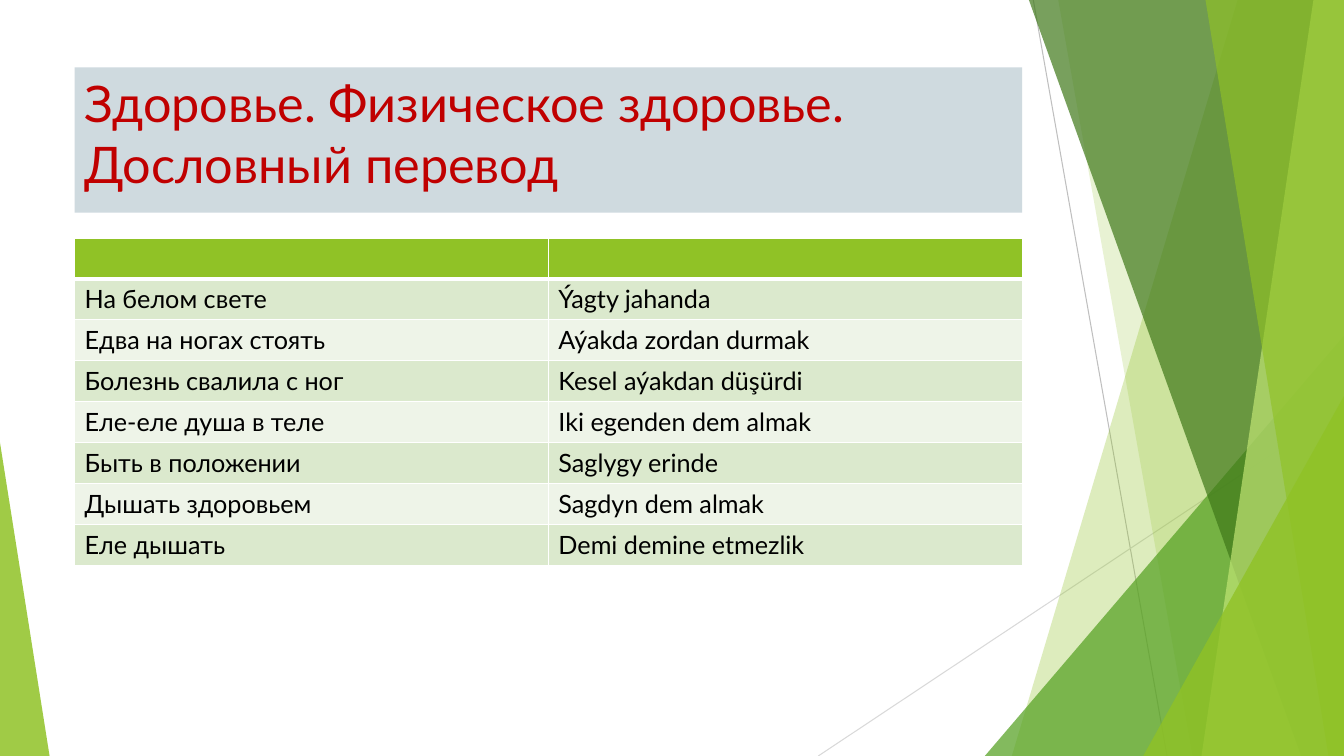
from lxml.etree import SubElement
from pptx import Presentation
from pptx.dml.color import RGBColor
from pptx.enum.shapes import MSO_CONNECTOR, MSO_SHAPE
from pptx.enum.text import MSO_ANCHOR, MSO_AUTO_SIZE, PP_ALIGN
from pptx.oxml import parse_xml
from pptx.oxml.ns import nsdecls, qn
from pptx.util import Cm, Pt

WIDTH, HEIGHT = 33.87, 19.05
LEFT, CONTENT_WIDTH = 1.88, 23.88
ROW_HEIGHT = 1.03

LIME = RGBColor(0x90, 0xC2, 0x26)
PALE_LIME = RGBColor(0xC0, 0xE4, 0x74)
GREEN = RGBColor(0x54, 0xA0, 0x21)
DARK_GREEN = RGBColor(0x3F, 0x78, 0x19)
BAND_DARK = RGBColor(0xDB, 0xE9, 0xCD)
BAND_LIGHT = RGBColor(0xEE, 0xF4, 0xE8)
BLUE_GRAY = RGBColor(0xCF, 0xDA, 0xDF)
GRAY = RGBColor(0xBF, 0xBF, 0xBF)
LIGHT_GRAY = RGBColor(0xD9, 0xD9, 0xD9)
RED = RGBColor(0xC0, 0x00, 0x00)
BLACK = RGBColor(0x00, 0x00, 0x00)
WHITE = RGBColor(0xFF, 0xFF, 0xFF)

PHRASES = [
    ("На белом свете", "Ýagty jahanda"),
    ("Едва на ногах стоять", "Aýakda zordan durmak"),
    ("Болезнь свалила с ног", "Kesel aýakdan düşürdi"),
    ("Еле-еле душа в теле", "Iki egenden dem almak"),
    ("Быть в положении", "Saglygy erinde"),
    ("Дышать здоровьем", "Sagdyn dem almak"),
    ("Еле дышать", "Demi demine etmezlik"),
]


def write_text(text_frame, text, size=18, color=BLACK, font="Lato"):
    paragraph = text_frame.paragraphs[0]
    paragraph.alignment = PP_ALIGN.LEFT
    run = paragraph.add_run()
    run.text = text
    run.font.size = Pt(size)
    run.font.name = font
    run.font.color.rgb = color


class SlideBuilder:
    def __init__(self, slide):
        self.slide = slide
        self.shapes = slide.shapes

    def line(self, start, end, color):
        connector = self.shapes.add_connector(
            MSO_CONNECTOR.STRAIGHT, *(Cm(value) for value in start + end))
        connector.line.color.rgb = color
        connector.line.width = Pt(0.75)
        SubElement(connector._element.spPr, qn("a:effectLst"))

    def paint(self, shape, color, opacity):
        shape.shadow.inherit = False
        shape.line.fill.background()
        shape.fill.solid()
        shape.fill.fore_color.rgb = color
        color_element = shape._element.spPr.find(f"{qn('a:solidFill')}/{qn('a:srgbClr')}")
        SubElement(color_element, qn("a:alpha"), val=str(opacity * 1000))

    def band(self, top_left, bottom_left, color, opacity):
        """Full-height facet that reaches the right edge of the slide."""
        corners = [(top_left, 0), (WIDTH, 0), (WIDTH, HEIGHT), (bottom_left, HEIGHT)]
        points = [(Cm(x), Cm(y)) for x, y in corners]
        builder = self.shapes.build_freeform(*points[0])
        builder.add_line_segments(points[1:])
        self.paint(builder.convert_to_shape(), color, opacity)

    def triangle(self, left, top, width, apex, color, opacity):
        """Facet that stands on the bottom edge of the slide."""
        shape = self.shapes.add_shape(MSO_SHAPE.ISOSCELES_TRIANGLE, Cm(left), Cm(top),
                                      Cm(width), Cm(HEIGHT - top))
        shape.adjustments[0] = apex
        self.paint(shape, color, opacity)

    def title(self, text, top, height):
        title = self.shapes.title
        title.left, title.top = Cm(LEFT), Cm(top)
        title.width, title.height = Cm(CONTENT_WIDTH), Cm(height)
        title.fill.solid()
        title.fill.fore_color.rgb = BLUE_GRAY
        title.text_frame.word_wrap = True
        title.text_frame.auto_size = MSO_AUTO_SIZE.NONE
        title.text_frame.vertical_anchor = MSO_ANCHOR.TOP
        write_text(title.text_frame, text, size=36, color=RED)

    def cell_borders(self, cell, top=1, bottom=1):
        properties = cell._tc.get_or_add_tcPr()
        widths = {"lnL": 1, "lnR": 1, "lnT": top, "lnB": bottom}
        for index, (side, width) in enumerate(widths.items()):
            properties.insert(index, parse_xml(
                f'<a:{side} {nsdecls("a")} w="{Pt(width)}"><a:solidFill>'
                f'<a:srgbClr val="{WHITE}"/></a:solidFill></a:{side}>'))

    def table(self, rows, top):
        frame = self.shapes.add_table(len(rows), len(rows[0]), Cm(LEFT), Cm(top),
                                      Cm(CONTENT_WIDTH), Cm(ROW_HEIGHT * len(rows)))
        for row_index, texts in enumerate(rows):
            frame.table.rows[row_index].height = Cm(ROW_HEIGHT)
            band_color = BAND_DARK if row_index % 2 else BAND_LIGHT
            for column_index, text in enumerate(texts):
                cell = frame.table.cell(row_index, column_index)
                cell.fill.solid()
                cell.fill.fore_color.rgb = band_color if row_index else LIME
                self.cell_borders(cell, top=3 if row_index == 1 else 1,
                                  bottom=1 if row_index else 3)
                if text:
                    write_text(cell.text_frame, text)


def main():
    presentation = Presentation()
    presentation.slide_width, presentation.slide_height = Cm(WIDTH), Cm(HEIGHT)
    slide = presentation.slides.add_slide(presentation.slide_layouts[5])
    builder = SlideBuilder(slide)

    # Thin lines and green facets
    builder.line((26.04, 0), (29.41, HEIGHT), GRAY)
    builder.line((WIDTH, 10.24), (20.62, HEIGHT), LIGHT_GRAY)
    builder.band(31.19, 25.5, LIME, 30)
    builder.band(26.67, 30.05, LIME, 20)
    builder.triangle(24.82, 8.46, 9.05, 1, GREEN, 72)
    builder.band(25.93, 32.79, DARK_GREEN, 70)
    builder.band(33.1, 30.28, PALE_LIME, 70)
    builder.band(30.38, 33.48, LIME, 65)
    builder.triangle(28.81, 9.98, 5.06, 1, LIME, 80)
    builder.triangle(0, 11.15, 1.25, 0, LIME, 85)

    # Title and table of phrases
    builder.title("Здоровье. Физическое здоровье. Дословный перевод", top=1.7, height=3.66)
    builder.table([("", "")] + PHRASES, top=6.0)

    presentation.save("out.pptx")


if __name__ == "__main__":
    main()
